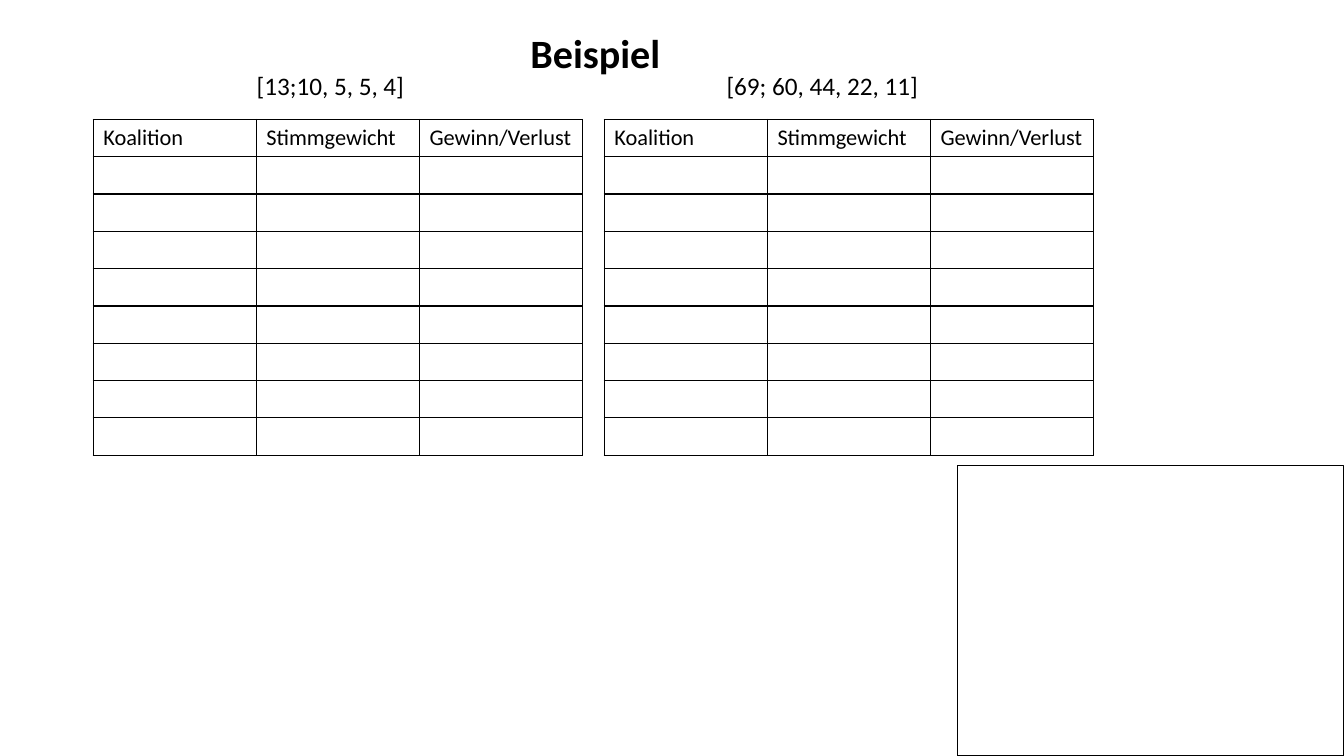
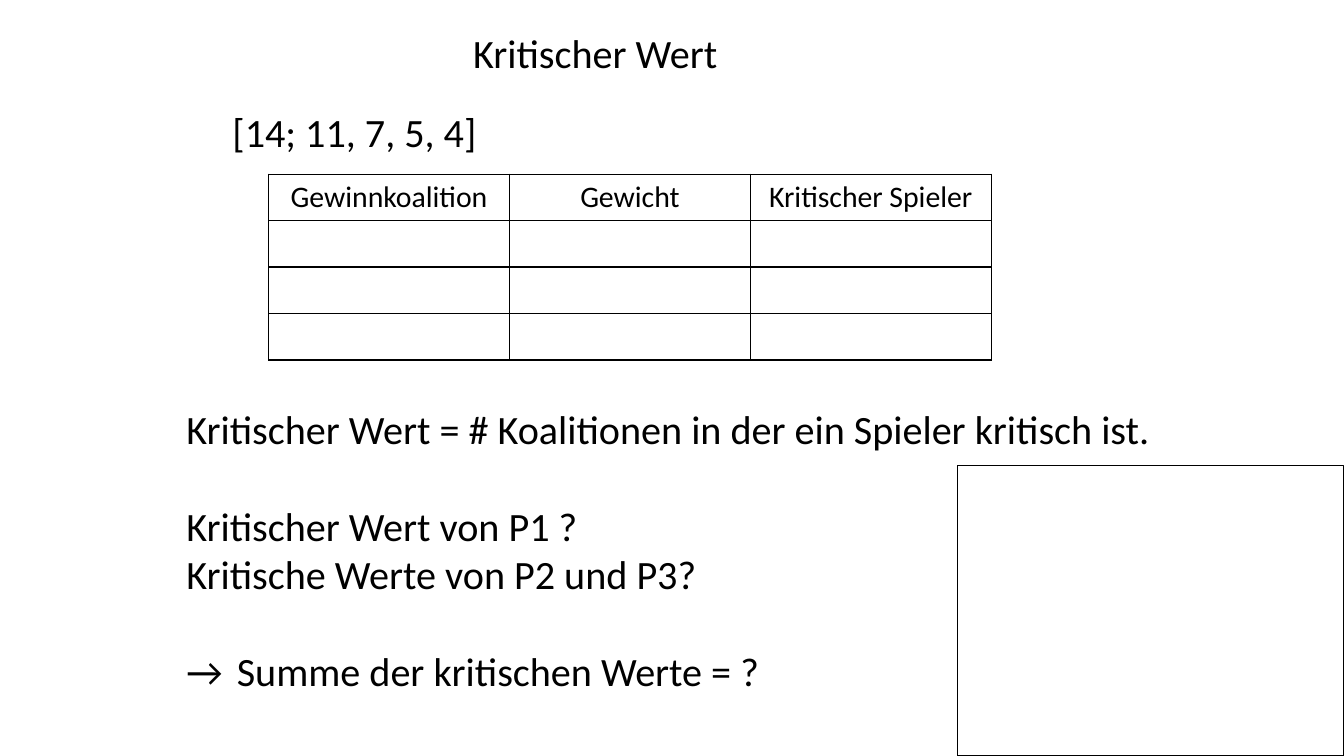
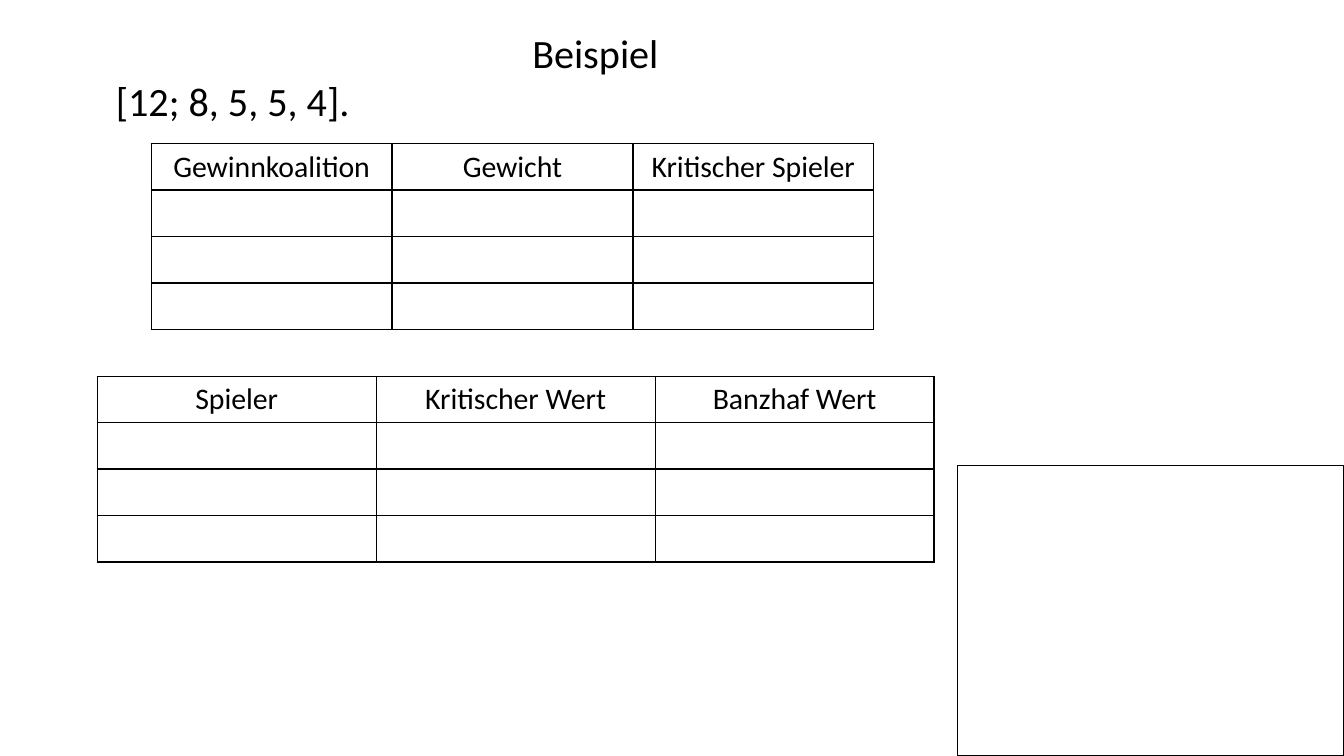
from lxml.etree import SubElement
from pptx import Presentation
from pptx.dml.color import RGBColor
from pptx.enum.shapes import MSO_SHAPE
from pptx.enum.text import MSO_ANCHOR, PP_ALIGN
from pptx.oxml.ns import qn
from pptx.util import Cm, Pt

COLORS = {"ink": "000000", "paper": "FFFFFF"}
FONT = "Calibri"
LARGE, MEDIUM, SMALL, CELL = 28.7, 21.3, 18, 16
INK = RGBColor.from_string(COLORS["ink"])
TITLE_BOX = (4.45, 0.28, 21.11, 2.06)
CAMERA_BOX = (24.13, 11.73, 9.73, 7.32)
COALITION_HEADS = ["Koalition", "Stimmgewicht", "Gewinn/Verlust"]
CRITICAL_HEADS = ["Gewinnkoalition", "Gewicht", "Kritischer Spieler"]
BANZHAF_HEADS = ["Spieler", "Kritischer Wert", "Banzhaf Wert"]

SLIDES = [
    {
        "title": "Beispiel",
        "bold": True,
        "texts": [
            ((6.22, 1.65, 4.42, 1.02), SMALL, [("[13;10, 5, 5, 4]", 0)]),
            ((18.06, 1.65, 5.41, 1.02), SMALL, [("[69; 60, 44, 22, 11]", 0)]),
        ],
        "tables": [
            (left, 3.01, 4.11, 0.94, 9, CELL, PP_ALIGN.LEFT, COALITION_HEADS)
            for left in (2.35, 15.23)
        ],
    },
    {
        "title": "Kritischer Wert",
        "bold": False,
        "texts": [
            ((5.61, 2.57, 18.77, 1.8), LARGE, [("[14; 11, 7, 5, 4]", 0)]),
            ((4.45, 10.06, 26.72, 7.6), LARGE, [
                ("Kritischer Wert = # Koalitionen in der ein Spieler kritisch ist.", 0),
                ("Kritischer Wert von P1 ?", 35),
                ("Kritische Werte von P2 und P3?", 0),
                ("→\tSumme der kritischen Werte = ?", 35),
            ]),
        ],
        "tables": [(6.77, 4.39, 6.07, 1.17, 4, MEDIUM, PP_ALIGN.CENTER, CRITICAL_HEADS)],
    },
    {
        "title": "Beispiel",
        "bold": False,
        "texts": [((2.67, 1.8, 18.77, 1.8), LARGE, [("[12; 8, 5, 5, 4].", 0)])],
        "tables": [
            (3.81, 3.62, 6.07, 1.17, 4, MEDIUM, PP_ALIGN.CENTER, CRITICAL_HEADS),
            (2.45, 9.48, 7.03, 1.17, 4, MEDIUM, PP_ALIGN.CENTER, BANZHAF_HEADS),
        ],
    },
]


def write_run(paragraph, text, size, bold=False):
    run = paragraph.add_run()
    run.text = text
    for name, value in {"name": FONT, "size": Pt(size), "bold": bold}.items():
        setattr(run.font, name, value)
    run.font.color.rgb = INK


def border_cell(cell):
    properties = cell._tc.get_or_add_tcPr()
    for side in ("a:lnL", "a:lnR", "a:lnT", "a:lnB"):
        line = SubElement(properties, qn(side), w=str(Pt(1)))
        fill = SubElement(line, qn("a:solidFill"))
        SubElement(fill, qn("a:srgbClr"), val=COLORS["ink"])
    cell.fill.background()


presentation = Presentation()
presentation.slide_width = Cm(33.87)
presentation.slide_height = Cm(19.05)

for content in SLIDES:
    slide = presentation.slides.add_slide(presentation.slide_layouts[6])
    slide.background.fill.solid()
    slide.background.fill.fore_color.rgb = RGBColor.from_string(COLORS["paper"])

    title = slide.shapes.add_textbox(*map(Cm, TITLE_BOX)).text_frame
    title_format = {
        "word_wrap": True,
        "vertical_anchor": MSO_ANCHOR.MIDDLE,
        "margin_top": Cm(0.1),
        "margin_bottom": Cm(0.1),
    }
    for name, value in title_format.items():
        setattr(title, name, value)
    title.paragraphs[0].alignment = PP_ALIGN.CENTER
    write_run(title.paragraphs[0], content["title"], LARGE, content["bold"])

    for left, top, column_width, row_height, row_count, size, alignment, heads in content["tables"]:
        table = slide.shapes.add_table(
            row_count, len(heads), Cm(left), Cm(top),
            Cm(column_width * len(heads)), Cm(row_height * row_count),
        ).table
        table.first_row = False
        table.horz_banding = False
        for column in table.columns:
            column.width = Cm(column_width)
        for row in table.rows:
            row.height = Cm(row_height)
        for cell in table.iter_cells():
            border_cell(cell)
            paragraph = cell.text_frame.paragraphs[0]
            paragraph.alignment = alignment
            SubElement(paragraph._p, qn("a:endParaRPr"), sz=str(round(size * 100)))
        for column_index, head in enumerate(heads):
            write_run(table.cell(0, column_index).text_frame.paragraphs[0], head, size)

    for box, size, lines in content["texts"]:
        frame = slide.shapes.add_textbox(*map(Cm, box)).text_frame
        frame.word_wrap = True
        for index, (text, gap) in enumerate(lines):
            paragraph = frame.add_paragraph() if index else frame.paragraphs[0]
            paragraph.space_before = Pt(gap)
            write_run(paragraph, text, size)

    camera = slide.shapes.add_shape(MSO_SHAPE.RECTANGLE, *map(Cm, CAMERA_BOX))
    camera.shadow.inherit = False
    camera.fill.background()
    camera.line.color.rgb = INK
    camera.line.width = Pt(1)

presentation.save("out.pptx")
